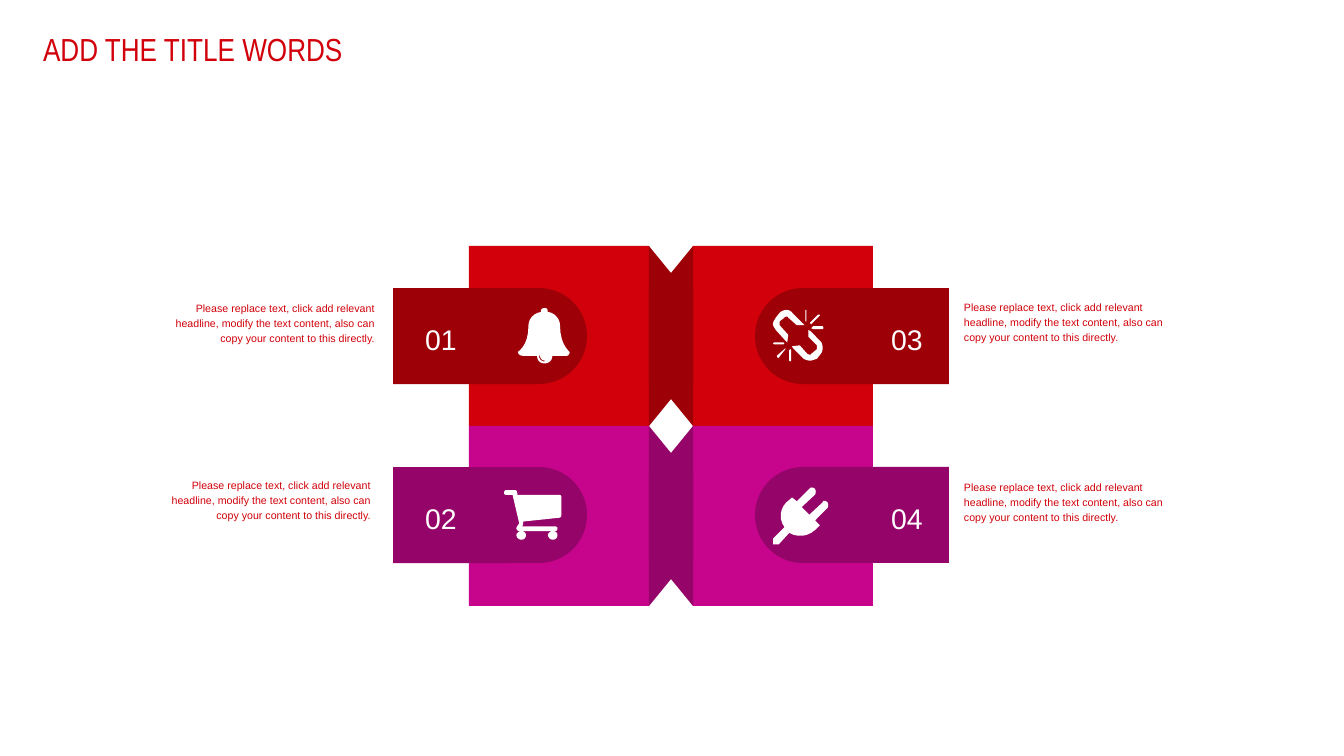
import pptx
import pptx.dml.color
import pptx.enum.shapes
import pptx.enum.text
import pptx.util

SHAPE = pptx.enum.shapes.MSO_SHAPE
ALIGN = pptx.enum.text.PP_ALIGN
ANCHOR = pptx.enum.text.MSO_ANCHOR

TITLE = "ADD THE TITLE WORDS"
ADVICE = ("Please replace text, click add relevant headline, modify the text "
          "content, also can copy your content to this directly.")
RED, DARK_RED = "D1000A", "9D0007"
PINK, DARK_PINK = "C7058C", "950469"
WHITE = "FFFFFF"


def wheel(x):
    return [(x, 52), (x - 2, 52, x - 5, 50, x - 5, 47), (x - 5, 45, x - 2, 43, x, 43),
            (x + 3, 43, x + 5, 45, x + 5, 47), (x + 5, 50, x + 3, 52, x, 52)]


# Outlines in icon units: (x, y) is a corner, six numbers are a Bézier curve.
BELL = [
    [(51, 50), (36, 50), (36, 55, 32, 58, 28, 58), (23, 58, 20, 55, 20, 50), (5, 50),
     (2, 50, 0, 48, 0, 46), (5, 42, 11, 35, 11, 18), (11, 12, 16, 5, 25, 4),
     (24, 4, 24, 4, 24, 3), (24, 1, 26, 0, 28, 0), (30, 0, 31, 1, 31, 3), (31, 4),
     (39, 5, 44, 12, 44, 18), (44, 35, 50, 42, 54, 46), (54, 48, 53, 50, 51, 50)],
    [(28, 55), (25, 55, 23, 52, 23, 50), (22, 49), (22, 50), (22, 53, 24, 56, 28, 56)],
]
CART = [
    [(60, 26), (60, 28, 59, 29, 58, 29), (20, 33), (20, 36), (19, 38), (53, 38),
     (55, 38, 56, 39, 56, 40), (56, 42, 55, 43, 53, 43), (16, 43),
     (15, 43, 13, 42, 13, 40), (13, 39, 15, 36, 16, 35), (9, 5), (2, 5),
     (1, 5, 0, 4, 0, 3), (0, 2, 1, 0, 2, 0), (11, 0), (14, 0, 14, 3, 14, 5),
     (58, 5), (59, 5, 60, 6, 60, 7)],
    wheel(18), wheel(51),
]
BROKEN_LINK = [
    [(25, 16), (16, 8), (16, 7, 15, 7, 14, 7), (13, 7, 13, 7, 12, 8), (7, 12),
     (7, 13, 7, 14, 7, 15), (7, 16), (16, 26), (15, 34), (13, 32), (3, 21),
     (2, 19, 0, 17, 0, 15), (0, 12, 2, 10, 3, 8), (7, 3), (9, 1, 12, 0, 14, 0),
     (17, 0, 19, 1, 21, 4), (31, 14), (33, 16)],
    [(50, 46), (46, 51), (43, 52, 41, 53, 39, 53), (36, 53, 34, 52, 32, 51), (21, 40),
     (20, 38), (28, 37), (36, 46), (38, 47, 40, 47, 40, 46), (46, 41),
     (46, 41, 46, 40, 46, 37), (37, 28), (37, 21), (39, 22), (50, 33),
     (51, 34, 52, 37, 52, 40), (52, 42, 51, 45, 50, 46)],
    [(11, 36), (1, 36), (0, 35), (1, 34), (11, 34), (12, 35)],
    [(6, 50), (5, 50), (4, 48), (13, 40), (13, 41)],
    [(19, 53), (18, 54), (17, 53), (17, 42), (18, 41), (19, 42)],
    [(34, 0), (35, 0), (35, 12), (34, 12)],
    [(40, 15), (39, 14), (39, 13), (47, 5), (49, 5), (49, 6)],
    [(52, 20), (42, 20), (40, 19), (42, 17), (52, 17), (53, 19)],
]
PLUG = [
    [(57, 22), (44, 35), (49, 40), (44, 45), (36, 52, 26, 53, 17, 48), (6, 60), (0, 60),
     (0, 54), (12, 42), (6, 34, 7, 23, 14, 16), (20, 11), (25, 15), (38, 2),
     (39, 0, 42, 0, 44, 2), (45, 4, 45, 6, 44, 8), (30, 21), (38, 29), (52, 16),
     (52, 14, 55, 14, 57, 16), (58, 18, 58, 20, 57, 22)],
]

# number, column, row, icon, icon corner, advice box
PANELS = [
    ("01", 0, 0, BELL, (518, 308), (169, 299, 206, 45)),
    ("02", 0, 1, CART, (504, 490), (165, 476, 206, 45)),
    ("03", 1, 0, BROKEN_LINK, (773, 310), (964, 298, 208, 45)),
    ("04", 1, 1, PLUG, (773, 487), (964, 478, 208, 45)),
]
ROW_COLORS = [(RED, DARK_RED), (PINK, DARK_PINK)]

PX = 914400 / 95.6
ICON_UNIT = 9144
CENTER, TOP = 671, 246
SQUARE, FOLD_WIDTH, FOLD_HEIGHT = 180, 22, 135
TAB_TOP, TAB_PITCH, TAB_LENGTH, TAB_HEIGHT = 288, 179, 194, 96
TAB_LEFTS = (393, 755)
NUMBER_LEFTS, NUMBER_TOP = (413, 879), 318


def px(value):
    return pptx.util.Emu(round(value * PX))


def rgb(color):
    return pptx.dml.color.RGBColor.from_string(color)


def paint(shape, color):
    shape.shadow.inherit = False
    shape.fill.solid()
    shape.fill.fore_color.rgb = rgb(color)
    shape.line.fill.background()


def add_block(shapes, kind, box, color, turn=0, flip=False):
    block = shapes.add_shape(kind, *map(px, box))
    paint(block, color)
    block.rotation = turn
    if flip:
        block._element.spPr.xfrm.set("flipH", "1")
    return block


def write(holder, text, size, color=RED, font="Arial", align=ALIGN.LEFT,
          anchor=ANCHOR.TOP, spacing=1.2, wrap=True, inset=0):
    frame = holder.text_frame
    frame.text = text
    frame.word_wrap = wrap
    frame.auto_size = pptx.enum.text.MSO_AUTO_SIZE.NONE
    frame.vertical_anchor = anchor
    frame.margin_left = frame.margin_right = px(inset)
    frame.margin_top = frame.margin_bottom = px(inset / 2)
    paragraph = frame.paragraphs[0]
    paragraph.alignment = align
    paragraph.line_spacing = spacing
    paragraph.font.size = pptx.util.Pt(size)
    paragraph.font.name = font
    paragraph.font.color.rgb = rgb(color)


def trace(outline, steps=6):
    """Turn corners and curves into a list of points in EMU."""
    points = []
    for part in outline:
        if len(part) == 2:
            points.append(part)
            continue
        start = points[-1]
        for step in range(1, steps + 1):
            t = step / steps
            weights = ((1 - t) ** 3, 3 * t * (1 - t) ** 2, 3 * t * t * (1 - t), t ** 3)
            controls = (start, part[:2], part[2:4], part[4:])
            points.append(tuple(sum(w * c[axis] for w, c in zip(weights, controls))
                                for axis in (0, 1)))
    return [(x * ICON_UNIT, y * ICON_UNIT) for x, y in points]


def add_icon(shapes, outlines, corner):
    first, *others = map(trace, outlines)
    builder = shapes.build_freeform(*first[0])
    builder.add_line_segments(first[1:])
    for points in others:
        builder.move_to(*points[0])
        builder.add_line_segments(points[1:])
    paint(builder.convert_to_shape(*map(px, corner)), WHITE)


def add_folded_square(shapes, column, row):
    color, shade = ROW_COLORS[row]
    top = TOP + row * SQUARE
    on_left = column == 0
    square_left = CENTER - FOLD_WIDTH - SQUARE if on_left else CENTER + FOLD_WIDTH
    fold_left = CENTER - FOLD_WIDTH if on_left else CENTER
    group = shapes.add_group_shape().shapes
    add_block(group, SHAPE.RECTANGLE, (square_left, top, SQUARE, SQUARE), color)
    for drop, turn, flip in ((0, 0, on_left), (SQUARE - FOLD_HEIGHT, 180, not on_left)):
        add_block(group, SHAPE.FLOWCHART_MANUAL_INPUT,
                  (fold_left, top + drop, FOLD_WIDTH, FOLD_HEIGHT), shade, turn, flip)


def add_tab(shapes, column, row):
    """Add a tab that lies on its side, its round end towards the middle."""
    inset = (TAB_LENGTH - TAB_HEIGHT) / 2
    box = (TAB_LEFTS[column] + inset, TAB_TOP + row * TAB_PITCH - inset,
           TAB_HEIGHT, TAB_LENGTH)
    tab = add_block(shapes, SHAPE.ROUND_2_SAME_RECTANGLE, box,
                    ROW_COLORS[row][1], turn=(90, 270)[column])
    tab.adjustments[0], tab.adjustments[1] = 0.5, 0


def main():
    deck = pptx.Presentation()
    deck.slide_width, deck.slide_height = px(1344), px(756)
    slide = deck.slides.add_slide(deck.slide_layouts[5])
    shapes = slide.shapes

    title = shapes.title
    title.left, title.top, title.width, title.height = map(px, (33, 5, 338, 60))
    write(title, TITLE, 24, font="Arial Narrow", spacing=1.5, inset=10)

    for _, column, row, *_ in PANELS:
        add_folded_square(shapes, column, row)
    for number, column, row, icon, corner, advice_box in PANELS:
        add_tab(shapes, column, row)
        add_icon(shapes, icon, corner)
        number_box = (NUMBER_LEFTS[column], NUMBER_TOP + row * TAB_PITCH, 56, 36)
        write(shapes.add_textbox(*map(px, number_box)), number, 21.4, WHITE,
              align=ALIGN.CENTER, anchor=ANCHOR.MIDDLE, wrap=False)
        write(shapes.add_textbox(*map(px, advice_box)), ADVICE, 8,
              align=(ALIGN.RIGHT, ALIGN.LEFT)[column])

    deck.save("out.pptx")


if __name__ == "__main__":
    main()
